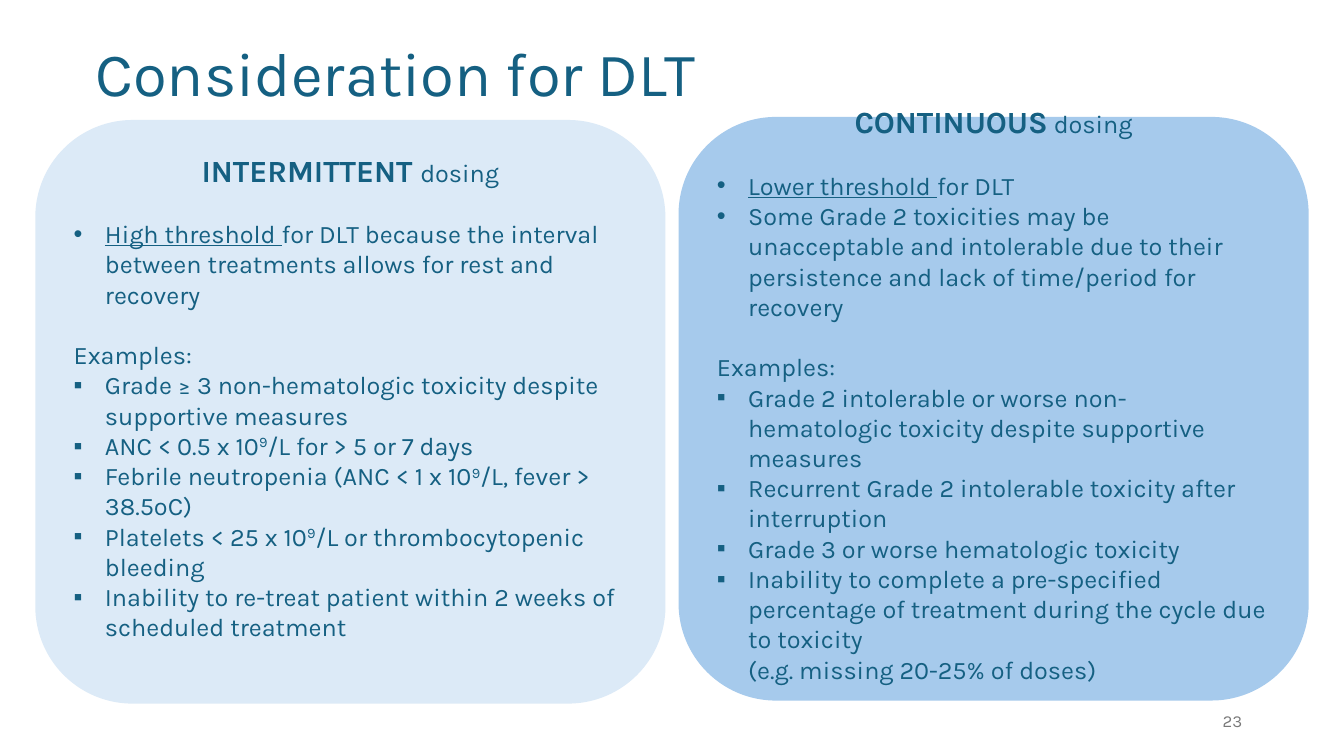
"""Build a slide comparing dose-limiting toxicity for two dosing schedules."""
from lxml.etree import SubElement
from pptx import Presentation
from pptx.dml.color import RGBColor
from pptx.enum.shapes import MSO_SHAPE
from pptx.enum.text import MSO_ANCHOR, PP_ALIGN
from pptx.oxml.ns import qn
from pptx.util import Inches, Pt

FONT = "Karla"
TEAL = RGBColor(0x15, 0x60, 0x82)
GRAY = RGBColor(0x79, 0x79, 0x79)
PALE_BLUE = RGBColor(0xDC, 0xEA, 0xF7)
MID_BLUE = RGBColor(0xA6, 0xCA, 0xEC)

SLIDE_WIDTH, SLIDE_HEIGHT = 13.33, 7.5
PANEL_LEFT, PANEL_WIDTH, PANEL_HEIGHT = 0.35, 6.25, 5.79
PANEL_STEP = PANEL_WIDTH + 0.13
BODY_SIZE = 18
LINE_HEIGHT = 21.6
HANGING_INDENT = 0.31

INTERMITTENT = {
    "heading": [("INTERMITTENT ", {"size": 22, "bold": True}), ("dosing", {})],
    "threshold": [
        [("High threshold ", {"underline": True}),
         ("for DLT because the interval between treatments allows for rest and recovery", {})],
    ],
    "examples": [
        [("Grade ≥ 3 non-hematologic toxicity despite supportive measures", {})],
        [("ANC < 0.5 x 10", {}), ("9", {"baseline": 30}), ("/L for > 5 or 7 days", {})],
        [("Febrile neutropenia (ANC < 1 x 10", {}), ("9", {"baseline": 30}),
         ("/L, fever > 38.5ºC)", {})],
        [("Platelets < 25 x 10", {}), ("9", {"baseline": 30}),
         ("/L or thrombocytopenic bleeding", {})],
        [("Inability to re-treat patient within 2 weeks of scheduled treatment", {})],
    ],
}
CONTINUOUS = {
    "heading": [("CONTINUOUS", {"size": 22, "bold": True}), (" dosing", {})],
    "threshold": [
        [("Lower threshold ", {"underline": True}), ("for DLT", {})],
        [("Some Grade 2 toxicities may be unacceptable and intolerable due to their "
          "persistence and lack of time/period for recovery", {})],
    ],
    "examples": [
        [("Grade 2 intolerable or worse non-hematologic toxicity despite supportive measures", {})],
        [("Recurrent Grade 2 intolerable toxicity after interruption", {})],
        [("Grade 3 or worse hematologic toxicity", {})],
        [("Inability to complete a pre-specified percentage of treatment during the cycle "
          "due to toxicity\n(e.g. missing 20-25% of doses)", {})],
    ],
}


def add_text(paragraph, text, size=BODY_SIZE, color=TEAL, bold=False, underline=False, baseline=0):
    """Add formatted text to a paragraph, turning newlines into line breaks."""
    for index, line in enumerate(text.split("\n")):
        if index:
            paragraph.add_line_break()
        run = paragraph.add_run()
        run.text = line
        run.font.name = FONT
        run.font.size = Pt(size)
        run.font.color.rgb = color
        run.font.bold = bold
        run.font.underline = underline
        if baseline:
            run.font._element.set("baseline", str(baseline * 1000))


def set_bullet(paragraph, character):
    """Give a paragraph a hanging bullet."""
    properties = paragraph._p.get_or_add_pPr()
    properties.set("marL", str(Inches(HANGING_INDENT)))
    properties.set("indent", str(-Inches(HANGING_INDENT)))
    SubElement(properties, qn("a:buFont")).set("typeface", "Arial")
    SubElement(properties, qn("a:buChar")).set("char", character)


def add_paragraph(text_frame, runs, bullet=None, gap=False, align=PP_ALIGN.LEFT):
    """Append a paragraph, optionally bulleted or one line below the last."""
    paragraph = text_frame.add_paragraph()
    paragraph.alignment = align
    if gap:
        paragraph.space_before = Pt(LINE_HEIGHT)
    if bullet:
        set_bullet(paragraph, bullet)
    for text, options in runs:
        add_text(paragraph, text, **options)


def add_label(slide, position, text, align=PP_ALIGN.LEFT, line_spacing=1.0, **options):
    """Add a one-line text box centred vertically in its frame."""
    shape = slide.shapes.add_textbox(*(Inches(length) for length in position))
    text_frame = shape.text_frame
    text_frame.word_wrap = True
    text_frame.vertical_anchor = MSO_ANCHOR.MIDDLE
    paragraph = text_frame.paragraphs[0]
    paragraph.alignment = align
    paragraph.line_spacing = line_spacing
    add_text(paragraph, text, **options)


def add_panel(slide, column, top, fill, content):
    """Add a rounded panel with a heading, thresholds and examples."""
    shape = slide.shapes.add_shape(
        MSO_SHAPE.ROUNDED_RECTANGLE, Inches(PANEL_LEFT + column * PANEL_STEP), Inches(top),
        Inches(PANEL_WIDTH), Inches(PANEL_HEIGHT))
    shape.shadow.inherit = False
    shape.fill.solid()
    shape.fill.fore_color.rgb = fill
    shape.line.fill.background()
    text_frame = shape.text_frame
    text_frame.word_wrap = True
    text_frame.vertical_anchor = MSO_ANCHOR.MIDDLE
    text_frame.margin_bottom = Inches(0.05) + Pt(LINE_HEIGHT)

    heading = text_frame.paragraphs[0]
    heading.alignment = PP_ALIGN.CENTER
    for text, options in content["heading"]:
        add_text(heading, text, **options)
    for index, runs in enumerate(content["threshold"]):
        add_paragraph(text_frame, runs, bullet="•", gap=index == 0)
    add_paragraph(text_frame, [("Examples:", {})], gap=True)
    for runs in content["examples"]:
        add_paragraph(text_frame, runs, bullet="▪")


def main():
    """Assemble and save the slide."""
    presentation = Presentation()
    presentation.slide_width = Inches(SLIDE_WIDTH)
    presentation.slide_height = Inches(SLIDE_HEIGHT)
    slide = presentation.slides.add_slide(presentation.slide_layouts[6])
    add_label(slide, (0.85, 0.03, 11.5, 1.45), "Consideration for DLT", size=44, line_spacing=0.9)
    add_label(slide, (9.42, 6.95, 3, 0.4), "23", align=PP_ALIGN.RIGHT, size=12, color=GRAY)
    add_panel(slide, 1, 1.16, MID_BLUE, CONTINUOUS)
    add_panel(slide, 0, 1.19, PALE_BLUE, INTERMITTENT)
    presentation.save("out.pptx")


if __name__ == "__main__":
    main()
